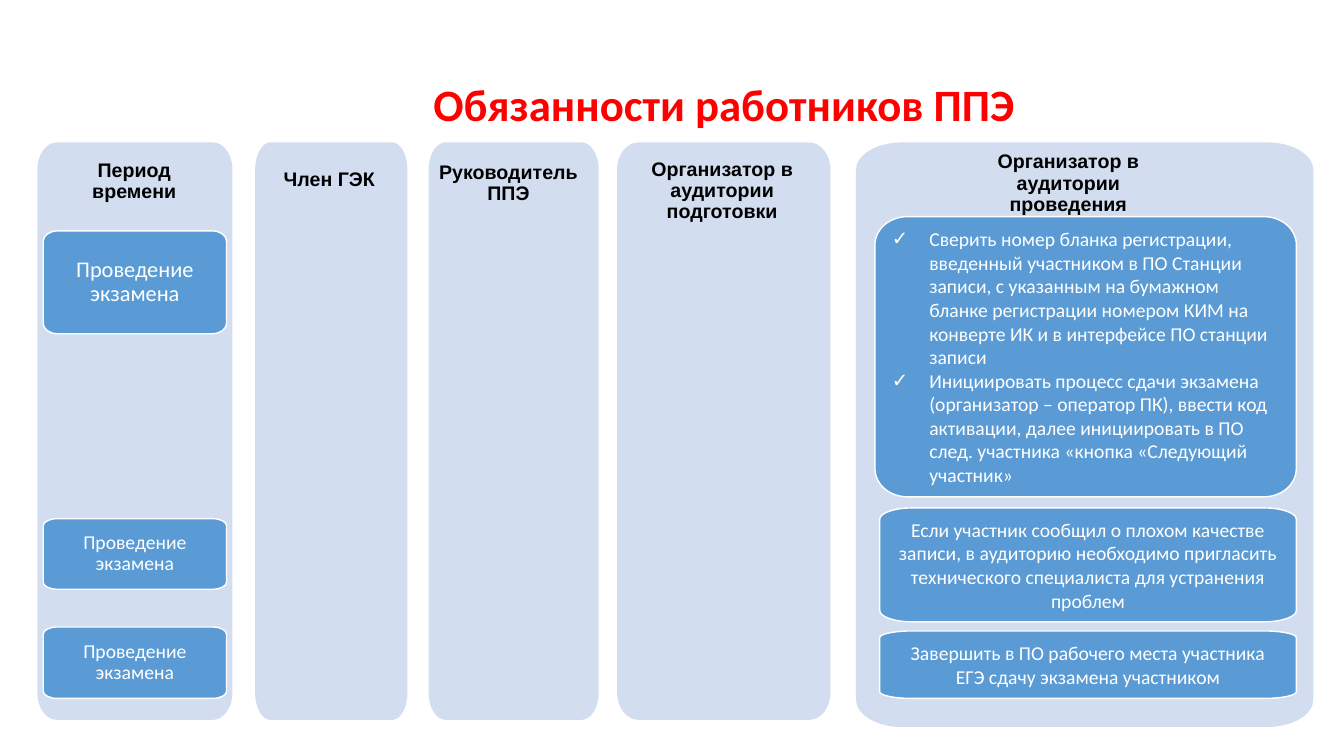
from lxml import etree
from pptx import Presentation
from pptx.dml.color import RGBColor
from pptx.enum.text import MSO_ANCHOR, MSO_AUTO_SIZE, PP_ALIGN
from pptx.oxml.ns import qn
from pptx.util import Cm, Pt

LEFT, CENTER = PP_ALIGN.LEFT, PP_ALIGN.CENTER
TOP, MIDDLE = MSO_ANCHOR.TOP, MSO_ANCHOR.MIDDLE
FIXED, GROW = MSO_AUTO_SIZE.NONE, MSO_AUTO_SIZE.SHAPE_TO_FIT_TEXT
COLORS = {"lane": "D2DEEF", "card": "5B9BD5", "light": "FFFFFF", "dark": "000000", "title": "FF0000"}
ROUND = 0.55

LANES = [
    (0.94, 4.92, 14.55),
    (6.43, 3.84, 14.55),
    (10.8, 4.29, 14.55),
    (15.55, 5.38, 14.55),
    (21.57, 11.53, 14.73),
]
HEADS = [
    ("Период времени", (1.25, 3.89, 4.27, 1.4), True),
    ("Член ГЭК", (6.84, 4.13, 2.92, 0.84), False),
    ("Руководитель ППЭ", (10.2, 3.95, 5.23, 1.37), True),
    ("Организатор в аудитории подготовки", (15.37, 3.86, 5.66, 1.93), True),
    ("Организатор в аудитории проведения", (24.18, 3.68, 5.49, 1.93), True),
]
CHECKS = [
    "Сверить номер бланка регистрации, введенный участником в ПО Станции записи, "
    "с указанным на бумажном бланке регистрации номером КИМ на конверте ИК "
    "и в интерфейсе ПО станции записи",
    "Инициировать процесс сдачи экзамена (организатор – оператор ПК), ввести код активации, "
    "далее инициировать в ПО след. участника «кнопка «Следующий участник»",
]
NOTES = [
    ("Если участник сообщил о плохом качестве записи, в аудиторию необходимо пригласить "
     "технического специалиста для устранения проблем", 12.8, 2.87),
    ("Завершить в ПО рабочего места участника ЕГЭ сдачу экзамена участником", 15.9, 1.7),
]
STAGE = "Проведение экзамена"
STAGES = [(5.82, 2.59, 16), (13.07, 1.78, 14), (15.8, 1.8, 14)]


def color(name):
    """Return the palette colour of that name."""
    return RGBColor.from_string(COLORS[name])


def write(shape, lines, size=14, font="Calibri", tint="light", bold=False, align=CENTER,
          anchor=MIDDLE, inset=(0.43, 0.36), spacing=1.0, mark=None, wrap=True, fit=FIXED):
    """Fill a shape with paragraphs in one format."""
    frame = shape.text_frame
    frame.word_wrap, frame.auto_size, frame.vertical_anchor = wrap, fit, anchor
    frame.margin_left = frame.margin_right = Cm(inset[0])
    frame.margin_top = frame.margin_bottom = Cm(inset[1])
    for i, line in enumerate(lines):
        para = frame.add_paragraph() if i else frame.paragraphs[0]
        para.alignment, para.line_spacing = align, spacing
        if mark:
            props = para._p.get_or_add_pPr()
            props.set("marL", str(Cm(0.94)))
            props.set("indent", str(-Cm(0.94)))
            etree.SubElement(props, qn("a:buFont")).set("typeface", "Arial")
            etree.SubElement(props, qn("a:buChar")).set("char", mark)
        run = para.add_run()
        run.text = line
        run.font.name, run.font.size, run.font.bold = font, Pt(size), bold
        run.font.color.rgb = color(tint)


class Board:
    """Draw the parts of a slide in one style."""

    def __init__(self, slide):
        """Keep the current slide."""
        self.slide = slide

    def title(self, text, box):
        """Place and format the title."""
        shape = self.slide.shapes.title
        shape.left, shape.top, shape.width, shape.height = map(Cm, box)
        write(shape, [text], size=32, tint="title", bold=True, anchor=TOP, inset=(0.3, 0.15), fit=GROW)

    def panel(self, box, curve, fill):
        """Draw a box with four curved corners."""
        x, y, w, h = map(Cm, box)
        rx, ry = round(w * curve[0]), round(h * curve[1])
        points = [(0, ry), (rx, 0), (w - rx, 0), (w, ry),
                  (w, h - ry), (w - rx, h), (rx, h), (0, h - ry)]
        path = self.slide.shapes.build_freeform(*points[0])
        path.add_line_segments(points[1:], close=True)
        shape = path.convert_to_shape(x, y)
        sides = list(shape._element.iter(qn("a:lnTo")))
        tips = [(0, 0), (w, 0), (w, h), (0, h)]
        for side, tip, start, end in zip(sides[::2], tips, points[::2], points[1::2]):
            side.tag = qn("a:cubicBezTo")
            for spot, base in enumerate((start, end)):
                guide = etree.Element(qn("a:pt"))
                for axis, a, b in zip("xy", base, tip):
                    guide.set(axis, str(round(a + ROUND * (b - a))))
                side.insert(spot, guide)
        shape.shadow.inherit = False
        shape.fill.solid()
        shape.fill.fore_color.rgb = color(fill)
        shape.line.fill.background()
        return shape

    def lane(self, box):
        """Draw a column background."""
        self.panel(box, (0.1, 0.0475), "lane")

    def head(self, text, box, wrap):
        """Add a column heading."""
        shape = self.slide.shapes.add_textbox(*map(Cm, box))
        write(shape, [text], font="Arial", tint="dark", bold=True, anchor=TOP,
              inset=(0.3, 0.15), spacing=0.9, wrap=wrap, fit=GROW)

    def card(self, lines, box, **style):
        """Add a bordered card with text."""
        shape = self.panel(box, (0.077, 0.1), "card")
        shape.line.color.rgb = color("light")
        shape.line.width = Pt(1)
        write(shape, lines, **style)


def main():
    """Build and save the slide."""
    deck = Presentation()
    deck.slide_width, deck.slide_height = Cm(33.87), Cm(19.05)
    board = Board(deck.slides.add_slide(deck.slide_layouts[5]))
    for left, width, height in LANES:
        board.lane((left, 3.59, width, height))
    for text, box, wrap in HEADS:
        board.head(text, box, wrap)
    board.card(CHECKS, (22.05, 5.46, 10.62, 7.06), align=LEFT, mark="✓")
    for text, top, height in NOTES:
        board.card([text], (22.17, top, 10.5, height))
    for top, height, size in STAGES:
        board.card([STAGE], (1.09, top, 4.62, height), size=size, spacing=0.9)
    board.title("Обязанности работников ППЭ", (3.96, 1.78, 28.58, 1.68))
    deck.save("out.pptx")


if __name__ == "__main__":
    main()
